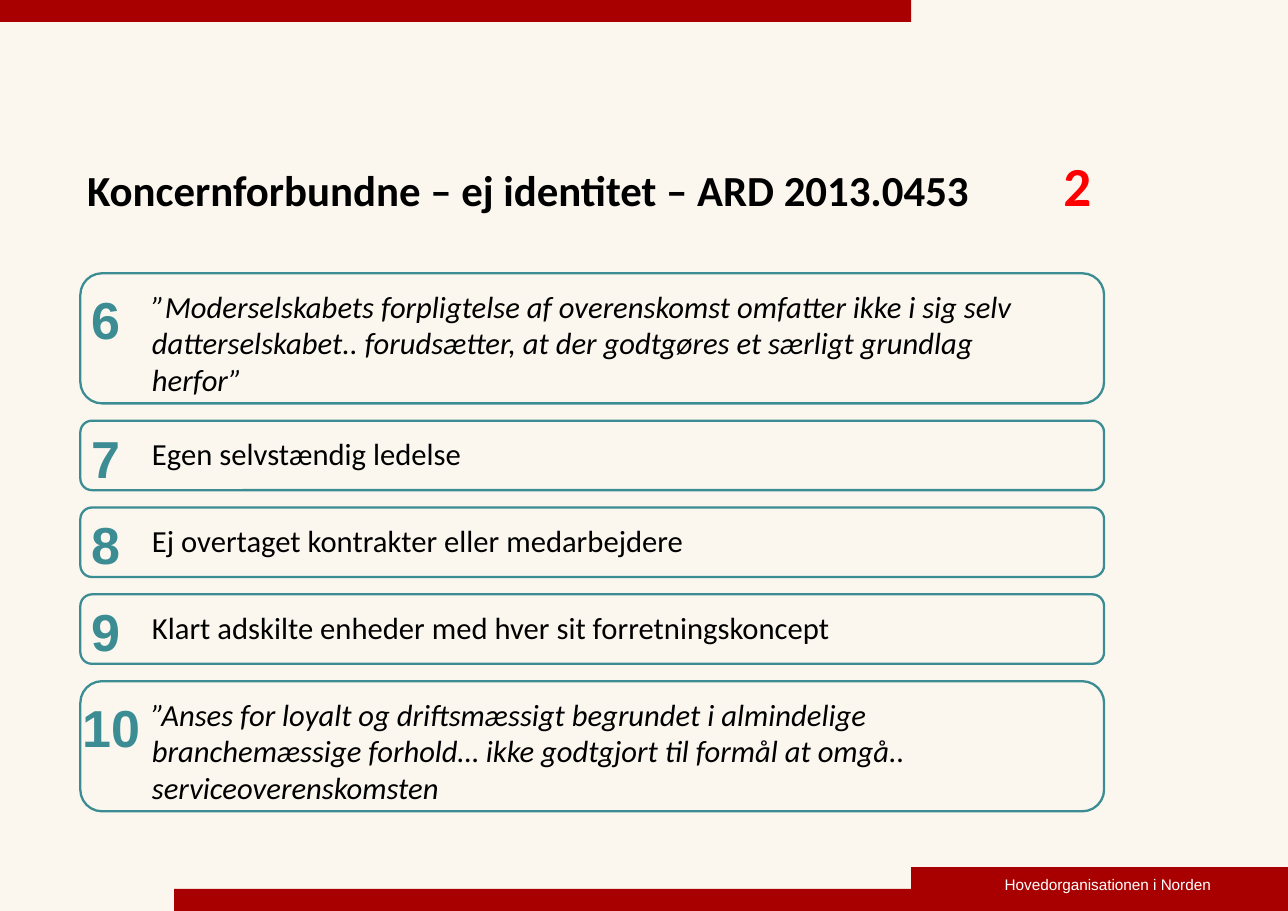
from lxml import etree
from pptx import Presentation
from pptx.dml.color import RGBColor
from pptx.enum.shapes import MSO_SHAPE as Shape
from pptx.enum.text import MSO_ANCHOR as Anchor, MSO_AUTO_SIZE as AutoSize, PP_ALIGN as Align
from pptx.oxml.ns import qn
from pptx.util import Pt

# Content
HEADING = "Koncernforbundne – ej identitet – ARD 2013.0453"
PAGE_PART = "2"
FOOTER = "Hovedorganisationen i Norden"
POINTS = [  # number, wording, is a quotation
    ("6", "”Moderselskabets forpligtelse af overenskomst omfatter ikke i sig selv "
          "datterselskabet.. forudsætter, at der godtgøres et særligt grundlag herfor”", True),
    ("7", "Egen selvstændig ledelse", False),
    ("8", "Ej overtaget kontrakter eller medarbejdere", False),
    ("9", "Klart adskilte enheder med hver sit forretningskoncept", False),
    ("10", "”Anses for loyalt og driftsmæssigt begrundet i almindelige branchemæssige "
           "forhold… ikke godtgjort til formål at omgå.. serviceoverenskomsten", True),
]

COLORS = {"paper": "FBF7EF", "band": "A80000", "teal": "3C8C93",
          "ink": "000000", "accent": "FF0000", "white": "FFFFFF"}

# Layout in points
SLIDE_W, SLIDE_H = 841.7, 595.4
BAND_H, BAND_SPLIT = 14.4, 595.4
BANDS = [  # left, top, width, height
    (0, 0, BAND_SPLIT, BAND_H),
    (113.8, SLIDE_H - BAND_H, SLIDE_W - 113.8, BAND_H),
    (BAND_SPLIT, SLIDE_H - 28.6, SLIDE_W - BAND_SPLIT, 28.6),
]
BOX_LEFT, BOX_TOP, BOX_W, BOX_GAP = 52.5, 178.6, 669, 11.35
QUOTE_H, LINE_H = 85, 45.4
PADDING = 5.8


def rgb(name):
    return RGBColor.from_string(COLORS[name])


def place(part, left, top, width, height):
    part.left, part.top, part.width, part.height = map(Pt, (left, top, width, height))


def write(paragraph, text, size, color="ink", font="Calibri", bold=False, italic=False):
    run = paragraph.add_run()
    run.text = text
    run.font.size, run.font.name = Pt(size), font
    run.font.bold, run.font.italic = bold, italic
    run.font.color.rgb = rgb(color)


def add_label(slide, bounds, text, inset=True, **style):
    frame = slide.shapes.add_textbox(*map(Pt, bounds)).text_frame
    frame.word_wrap = True
    if not inset:
        clear_insets(frame)
    write(frame.paragraphs[0], text, **style)


def clear_insets(frame):
    frame.margin_left = frame.margin_top = frame.margin_right = frame.margin_bottom = 0


def add_panel(slide, kind, bounds):
    panel = slide.shapes.add_shape(kind, *map(Pt, bounds))
    panel.shadow.inherit = False
    return panel


def add_heading(slide):
    heading = slide.shapes.title
    place(heading, 56.9, 85, 736.6, 56.9)
    frame = heading.text_frame
    clear_insets(frame)
    frame.word_wrap = True
    frame.auto_size = AutoSize.NONE
    frame.vertical_anchor = Anchor.BOTTOM
    line = frame.paragraphs[0]
    line.alignment = Align.LEFT
    # A tab stop sets the part number apart
    tabs = etree.SubElement(line._p.get_or_add_pPr(), qn("a:tabLst"))
    etree.SubElement(tabs, qn("a:tab"), pos=str(Pt(638)), algn="l")
    write(line, HEADING + "\t", size=28, bold=True)
    write(line, PAGE_PART, size=36, color="accent", bold=True)


def add_point(slide, top, height, number, wording, quoted):
    box = add_panel(slide, Shape.ROUNDED_RECTANGLE, (BOX_LEFT, top, BOX_W, height))
    box.fill.background()
    box.line.color.rgb = rgb("teal")
    box.line.width = Pt(1.5)
    add_label(slide, (92.2, top + PADDING, 601.2, height - PADDING), wording,
              size=20, italic=quoted)
    # Two digits start further left; quotations have a lower number
    number_left = BOX_LEFT - PADDING * (len(number) - 1)
    number_top = top + PADDING * quoted
    add_label(slide, (number_left, number_top, 67.7, 48.2), number,
              size=34, color="teal", font="Arial", bold=True)


def main():
    deck = Presentation()
    deck.slide_width, deck.slide_height = Pt(SLIDE_W), Pt(SLIDE_H)
    slide = deck.slides.add_slide(deck.slide_layouts[5])
    slide.background.fill.solid()
    slide.background.fill.fore_color.rgb = rgb("paper")

    # Red bands and footer
    for bounds in BANDS:
        band = add_panel(slide, Shape.RECTANGLE, bounds)
        band.fill.solid()
        band.fill.fore_color.rgb = rgb("band")
        band.line.fill.background()
    add_label(slide, (656.6, 571.7, 154.8, 12.2), FOOTER, inset=False,
              size=10, color="white", font="Arial")

    add_heading(slide)

    # Numbered points, stacked with equal gaps
    top = BOX_TOP
    for number, wording, quoted in POINTS:
        height = QUOTE_H if quoted else LINE_H
        add_point(slide, top, height, number, wording, quoted)
        top += height + BOX_GAP

    deck.save("out.pptx")


if __name__ == "__main__":
    main()
